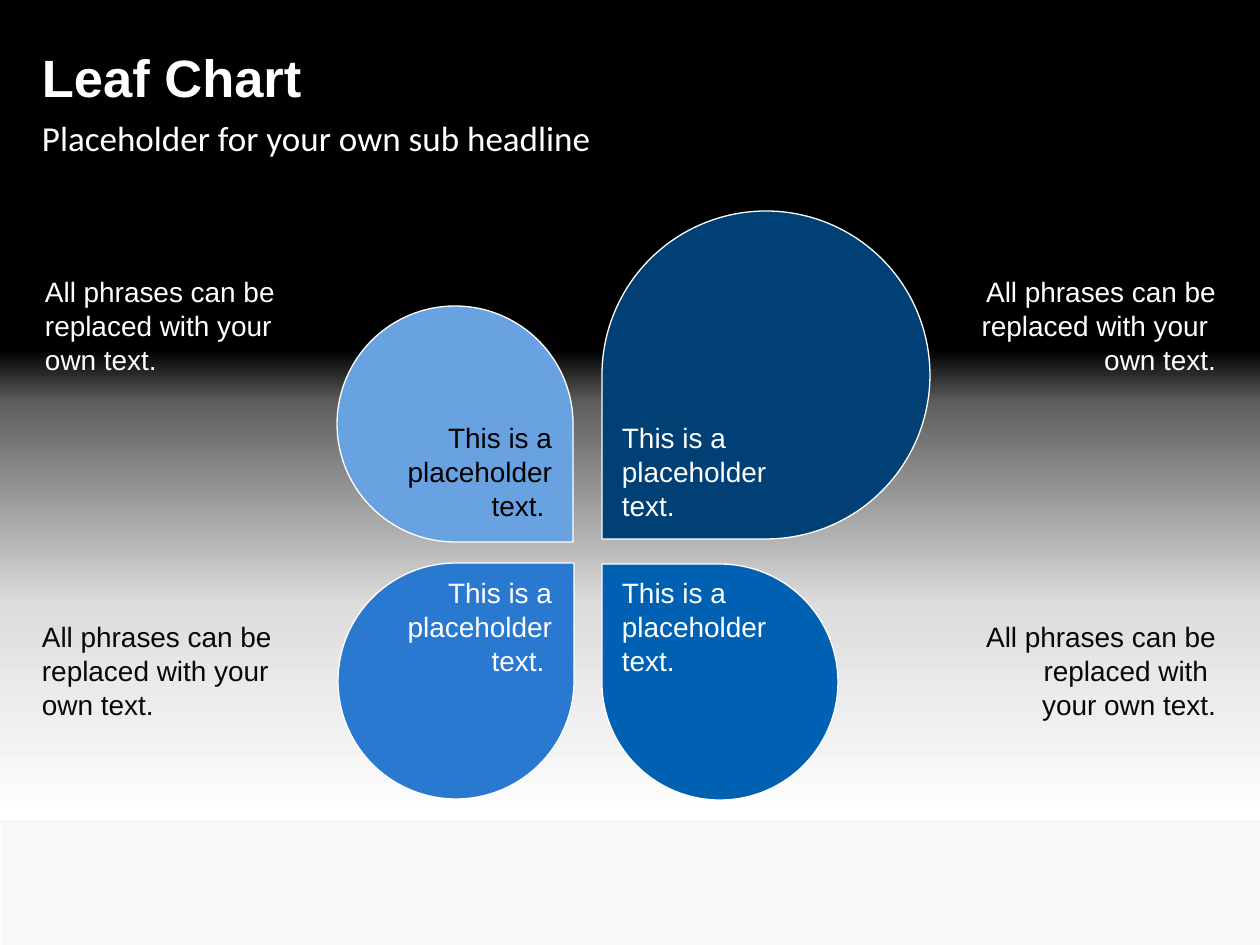
import pptx
import pptx.util
import pptx.dml.color
import pptx.enum.shapes
import pptx.enum.text
import lxml.etree

PX = 914400 // 126
COLORS = {
    "white": "FFFFFF", "black": "000000", "ink": "080808",
    "gray": "5F5F5F", "silver": "DDDDDD", "mist": "F2F2F2",
    "navy": "004074", "blue": "0061B2", "azure": "2A79D0", "sky": "69A2E1",
}
KIND = pptx.enum.shapes.MSO_SHAPE
ALIGN = pptx.enum.text.PP_ALIGN
ANCHOR = pptx.enum.text.MSO_ANCHOR


def rgb(name):
    return pptx.dml.color.RGBColor.from_string(COLORS[name])


def write(box, text, color, size=16, font="Arial", bold=False,
          align=ALIGN.LEFT, anchor=ANCHOR.TOP):
    """Add a wrapped text box without margins; box is left, top, width, height."""
    frame = slide.shapes.add_textbox(*[n * PX for n in box]).text_frame
    frame.word_wrap = True
    frame.vertical_anchor = anchor
    frame.margin_left = frame.margin_right = 0
    frame.margin_top = frame.margin_bottom = 0
    frame.text = text
    para = frame.paragraphs[0]
    para.alignment = align
    for run in para.runs:
        run.font.size = pptx.util.Pt(size)
        run.font.name = font
        run.font.bold = bold
        run.font.color.rgb = rgb(color)


deck = pptx.Presentation()
deck.slide_width = 1260 * PX
deck.slide_height = 945 * PX
slide = deck.slides.add_slide(deck.slide_layouts[6])
slide.background.fill.solid()
slide.background.fill.fore_color.rgb = rgb("white")

# Half-clear floor
floor = slide.shapes.add_shape(KIND.RECTANGLE, PX, 530 * PX, 1259 * PX, 415 * PX)
floor.shadow.inherit = False
floor.line.fill.background()
floor.fill.solid()
floor.fill.fore_color.rgb = rgb("mist")
tint = floor.fill._xPr.find(".//" + pptx.oxml.ns.qn("a:srgbClr"))
lxml.etree.SubElement(tint, pptx.oxml.ns.qn("a:alpha"), val="49000")

# Backdrop bands: top, height, upper colour, lower colour
bands = [
    (0, 363, "black", "black"),
    (403, 203, "gray", "silver"),
    (350, 54, "black", "gray"),
    (605, 215, "silver", "white"),
]
for top, height, upper, lower in bands:
    band = slide.shapes.add_shape(KIND.RECTANGLE, 0, top * PX, 1260 * PX, height * PX)
    band.shadow.inherit = False
    band.line.fill.background()
    if upper == lower:
        band.fill.solid()
        band.fill.fore_color.rgb = rgb(upper)
    else:
        band.fill.gradient()
        band.fill.gradient_angle = 270
        for stop, color in zip(band.fill.gradient_stops, (upper, lower)):
            stop.color.rgb = rgb(color)

# Headings
write((42, 113, 793, 49), "Placeholder for your own sub headline", "white",
      size=20, font="Calibri", anchor=ANCHOR.MIDDLE)
write((42, 8, 1174, 137), "Leaf Chart", "white", size=30, bold=True,
      anchor=ANCHOR.MIDDLE)

# Side notes
early = "All phrases can be replaced with your \vown text."
late = "All phrases can be replaced with \vyour own text."
write((906, 275, 310, 101), early, "white", align=ALIGN.RIGHT)
write((42, 620, 304, 101), early, "ink")
write((887, 620, 329, 101), late, "ink", align=ALIGN.RIGHT)
write((45, 275, 320, 101), early, "white")

# Leaves: left, top, size, turn, colour
leaves = [
    (602, 211, 328, 180, "navy"),
    (602, 564, 236, 270, "blue"),
    (338, 563, 236, 0, "azure"),
    (337, 306, 236, 90, "sky"),
]
for left, top, size, turn, color in leaves:
    leaf = slide.shapes.add_shape(KIND.TEAR, left * PX, top * PX, size * PX, size * PX)
    leaf.shadow.inherit = False
    leaf.rotation = turn
    leaf.fill.solid()
    leaf.fill.fore_color.rgb = rgb(color)
    leaf.line.color.rgb = rgb("white")
    leaf.line.width = pptx.util.Pt(0.75)

# Leaf labels
label = "This is a placeholder text."
for top, color in ((421, "black"), (576, "white")):
    write((622, top, 193, 101), label, "white")
    write((359, top, 193, 101), label + " ", color, align=ALIGN.RIGHT)

deck.save("out.pptx")
